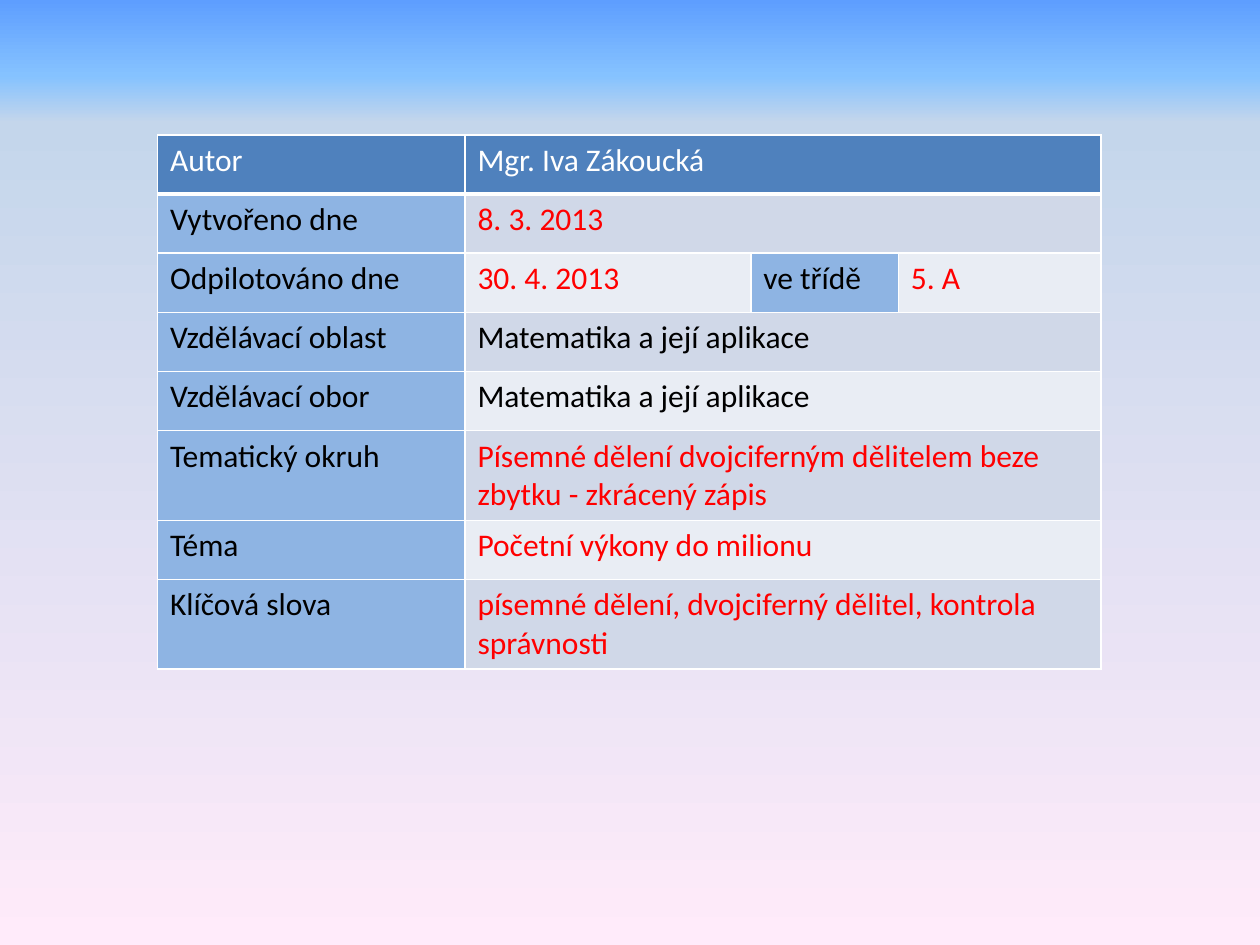
from lxml import etree
from pptx import Presentation
from pptx import util as u
from pptx.dml.color import RGBColor
from pptx.oxml.ns import qn

WHITE = RGBColor(0xFF, 0xFF, 0xFF)
BLACK = RGBColor(0x00, 0x00, 0x00)
RED = RGBColor(0xFF, 0x00, 0x00)
HEADER_BLUE = RGBColor(0x4F, 0x81, 0xBD)
LABEL_BLUE = RGBColor(0x8E, 0xB4, 0xE3)
BAND_DARK = RGBColor(0xD0, 0xD8, 0xE8)
BAND_LIGHT = RGBColor(0xE9, 0xED, 0xF4)

SKY_STOPS = [
    (0, RGBColor(0x5E, 0x9E, 0xFF)),
    (8, RGBColor(0x85, 0xC2, 0xFF)),
    (13, RGBColor(0xC4, 0xD6, 0xEB)),
    (100, RGBColor(0xFF, 0xEB, 0xFA)),
]
COLUMN_WIDTHS = [2.44, 2.27, 1.17, 1.61]
ROW_HEIGHT = 0.47
HEADER_BORDERS = {"a:lnL": 1, "a:lnR": 1, "a:lnT": 1, "a:lnB": 3}

# Each row alternates labels and values; a value is (text, colour).
ROWS = [
    ["Autor", ("Mgr. Iva Zákoucká", WHITE)],
    ["Vytvořeno dne", ("8. 3. 2013", RED)],
    ["Odpilotováno dne", ("30. 4. 2013", RED), "ve třídě", ("5. A", RED)],
    ["Vzdělávací oblast", ("Matematika a její aplikace", BLACK)],
    ["Vzdělávací obor", ("Matematika a její aplikace", BLACK)],
    ["Tematický okruh",
     ("Písemné dělení dvojciferným dělitelem beze zbytku - zkrácený zápis", RED)],
    ["Téma", ("Početní výkony do milionu", RED)],
    ["Klíčová slova",
     ("písemné dělení, dvojciferný dělitel, kontrola správnosti", RED)],
]


class SlideBuilder:
    def __init__(self, slide):
        self.slide = slide
        self.font_format = {"name": "Calibri", "size": u.Pt(18), "bold": False}

    def gradient_background(self, stops):
        """Fill the background from top to bottom with (percent, colour) stops."""
        fill = self.slide.background.fill
        fill.gradient()
        fill.gradient_angle = 270
        stop_list = self.slide.element.find(".//" + qn("a:gsLst"))
        for stop in list(stop_list):
            stop_list.remove(stop)
        for percent, color in stops:
            stop = etree.SubElement(stop_list, qn("a:gs"), pos=str(percent * 1000))
            etree.SubElement(stop, qn("a:srgbClr"), val=str(color))

    def cell(self, cell, content, color, fill):
        cell.fill.solid()
        cell.fill.fore_color.rgb = fill
        run = cell.text_frame.paragraphs[0].add_run()
        run.text = content
        for name, value in self.font_format.items():
            setattr(run.font, name, value)
        run.font.color.rgb = color

    def borders(self, cell, widths):
        properties = cell._tc.get_or_add_tcPr()
        for index, (tag, points) in enumerate(widths.items()):
            line = etree.Element(qn(tag), w=str(u.Pt(points)))
            solid = etree.SubElement(line, qn("a:solidFill"))
            etree.SubElement(solid, qn("a:srgbClr"), val=str(WHITE))
            properties.insert(index, line)

    def info_table(self, left, top, rows):
        frame = self.slide.shapes.add_table(
            len(rows), len(COLUMN_WIDTHS), u.Inches(left), u.Inches(top),
            u.Inches(sum(COLUMN_WIDTHS)), u.Inches(ROW_HEIGHT * len(rows)))
        table = frame.table
        for column, width in zip(table.columns, COLUMN_WIDTHS):
            column.width = u.Inches(width)
        last_column = len(COLUMN_WIDTHS) - 1
        for row_index, entries in enumerate(rows):
            table.rows[row_index].height = u.Inches(ROW_HEIGHT)
            is_header = row_index == 0
            band = BAND_DARK if row_index % 2 else BAND_LIGHT
            for column_index, entry in enumerate(entries):
                if isinstance(entry, str):
                    content, color, fill = entry, BLACK, LABEL_BLUE
                else:
                    (content, color), fill = entry, band
                if is_header:
                    color, fill = WHITE, HEADER_BLUE
                self.cell(table.cell(row_index, column_index), content, color, fill)
            if len(entries) == 2:
                table.cell(row_index, 1).merge(table.cell(row_index, last_column))
        for column_index in range(len(COLUMN_WIDTHS)):
            self.borders(table.cell(0, column_index), HEADER_BORDERS)


def main():
    presentation = Presentation()
    presentation.slide_width = u.Inches(10)
    presentation.slide_height = u.Inches(7.5)
    blank_layout = presentation.slide_layouts[6]
    builder = SlideBuilder(presentation.slides.add_slide(blank_layout))
    builder.gradient_background(SKY_STOPS)
    builder.info_table(1.25, 1.07, ROWS)
    presentation.save("out.pptx")


if __name__ == "__main__":
    main()
